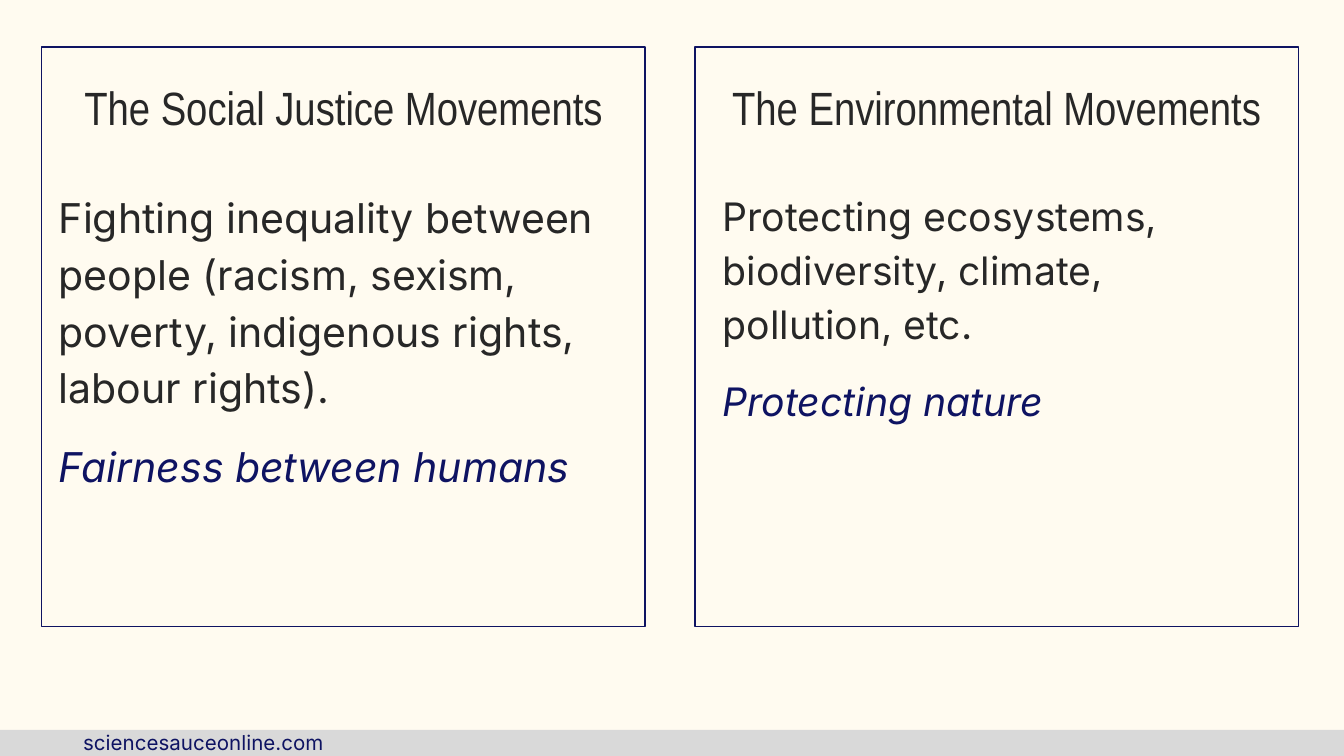
from dataclasses import dataclass

from pptx import Presentation
from pptx.dml.color import RGBColor
from pptx.enum.shapes import MSO_SHAPE
from pptx.enum.text import MSO_ANCHOR, PP_ALIGN
from pptx.util import Inches, Pt

RECTANGLE = MSO_SHAPE.RECTANGLE
TOP = MSO_ANCHOR.TOP
LEFT, CENTER = PP_ALIGN.LEFT, PP_ALIGN.CENTER

CREAM = RGBColor(0xFF, 0xFB, 0xF0)
GREY = RGBColor(0xD9, 0xD9, 0xD9)
NAVY = RGBColor(0x0E, 0x13, 0x62)
CHARCOAL = RGBColor(0x27, 0x27, 0x27)

SLIDE_WIDTH = 10
SLIDE_HEIGHT = SLIDE_WIDTH * 9 / 16
INSET = 0.1
COLUMN_LEFT, COLUMN_STEP = 0.31, 4.86
PANEL_TOP, PANEL_WIDTH, PANEL_HEIGHT = 0.35, 4.49, 4.31
TITLE_TOP, TITLE_WIDTH, TITLE_HEIGHT = 0.49, 4.6, 0.67
BODY_TOP, BODY_WIDTH, BODY_HEIGHT = 1.28, 4.37, 3.72


@dataclass(frozen=True)
class Box:
    left: float
    top: float
    width: float
    height: float

    def emu(self) -> list[int]:
        return [Inches(v) for v in (self.left, self.top, self.width, self.height)]


@dataclass(frozen=True)
class Line:
    text: str
    size: float
    font: str = "Inter"
    color: RGBColor = CHARCOAL
    italic: bool = False
    align: PP_ALIGN = LEFT
    spacing: float = 1.0
    gap: float = 0


@dataclass(frozen=True)
class Movement:
    title: str
    aims: str
    summary: str
    size: float
    body_indent: float


FOOTER_BAR = Box(0, 5.43, SLIDE_WIDTH, 0.21)
FOOTER_ADDRESS = Box(0.52, 5.34, 3.34, 0.18)

MOVEMENTS = [
    Movement(
        "The Social Justice Movements",
        "Fighting inequality between people (racism, sexism, poverty, "
        "indigenous rights, labour rights).",
        "Fairness between humans",
        22,
        0.03,
    ),
    Movement(
        "The Environmental Movements",
        "Protecting ecosystems, biodiversity, climate, pollution, etc.",
        "Protecting nature",
        21,
        0.11,
    ),
]


def add_rectangle(slide, box: Box, fill: RGBColor | None = None,
                  outline: RGBColor | None = None) -> None:
    rectangle = slide.shapes.add_shape(RECTANGLE, *box.emu())
    rectangle.shadow.inherit = False
    if fill is None:
        rectangle.fill.background()
    else:
        rectangle.fill.solid()
        rectangle.fill.fore_color.rgb = fill
    if outline is None:
        rectangle.line.fill.background()
    else:
        rectangle.line.color.rgb = outline
        rectangle.line.width = Pt(0.75)


def add_text(slide, box: Box, lines: list[Line]) -> None:
    frame = slide.shapes.add_textbox(*box.emu()).text_frame
    frame.word_wrap = True
    frame.vertical_anchor = TOP
    frame.margin_left = frame.margin_right = Inches(INSET)
    frame.margin_top = frame.margin_bottom = Inches(INSET)
    frame.text = "\n".join(line.text for line in lines)
    for paragraph, line in zip(frame.paragraphs, lines):
        paragraph.alignment = line.align
        paragraph.line_spacing = line.spacing
        if line.gap:
            paragraph.space_before = paragraph.space_after = Pt(line.gap)
        for run in paragraph.runs:
            run.font.name = line.font
            run.font.size = Pt(line.size)
            run.font.color.rgb = line.color
            run.font.italic = line.italic


def add_footer(slide) -> None:
    add_rectangle(slide, FOOTER_BAR, fill=GREY)
    add_text(slide, FOOTER_ADDRESS, [Line("sciencesauceonline.com", 11, color=NAVY)])


def add_movement(slide, column: int, movement: Movement) -> None:
    left = COLUMN_LEFT + column * COLUMN_STEP
    add_rectangle(slide, Box(left, PANEL_TOP, PANEL_WIDTH, PANEL_HEIGHT), outline=NAVY)
    title_left = left + (PANEL_WIDTH - TITLE_WIDTH) / 2
    add_text(slide, Box(title_left, TITLE_TOP, TITLE_WIDTH, TITLE_HEIGHT),
             [Line(movement.title, 25, font="Arial Narrow", align=CENTER)])
    add_text(slide, Box(left + movement.body_indent, BODY_TOP, BODY_WIDTH, BODY_HEIGHT), [
        Line(movement.aims, movement.size, spacing=1.15),
        Line(movement.summary, movement.size, color=NAVY, italic=True,
             spacing=1.15, gap=12),
    ])


def main() -> None:
    presentation = Presentation()
    presentation.slide_width = Inches(SLIDE_WIDTH)
    presentation.slide_height = Inches(SLIDE_HEIGHT)
    slide = presentation.slides.add_slide(presentation.slide_layouts[6])
    slide.background.fill.solid()
    slide.background.fill.fore_color.rgb = CREAM
    add_footer(slide)
    for column, movement in enumerate(MOVEMENTS):
        add_movement(slide, column, movement)
    presentation.save("out.pptx")


if __name__ == "__main__":
    main()
